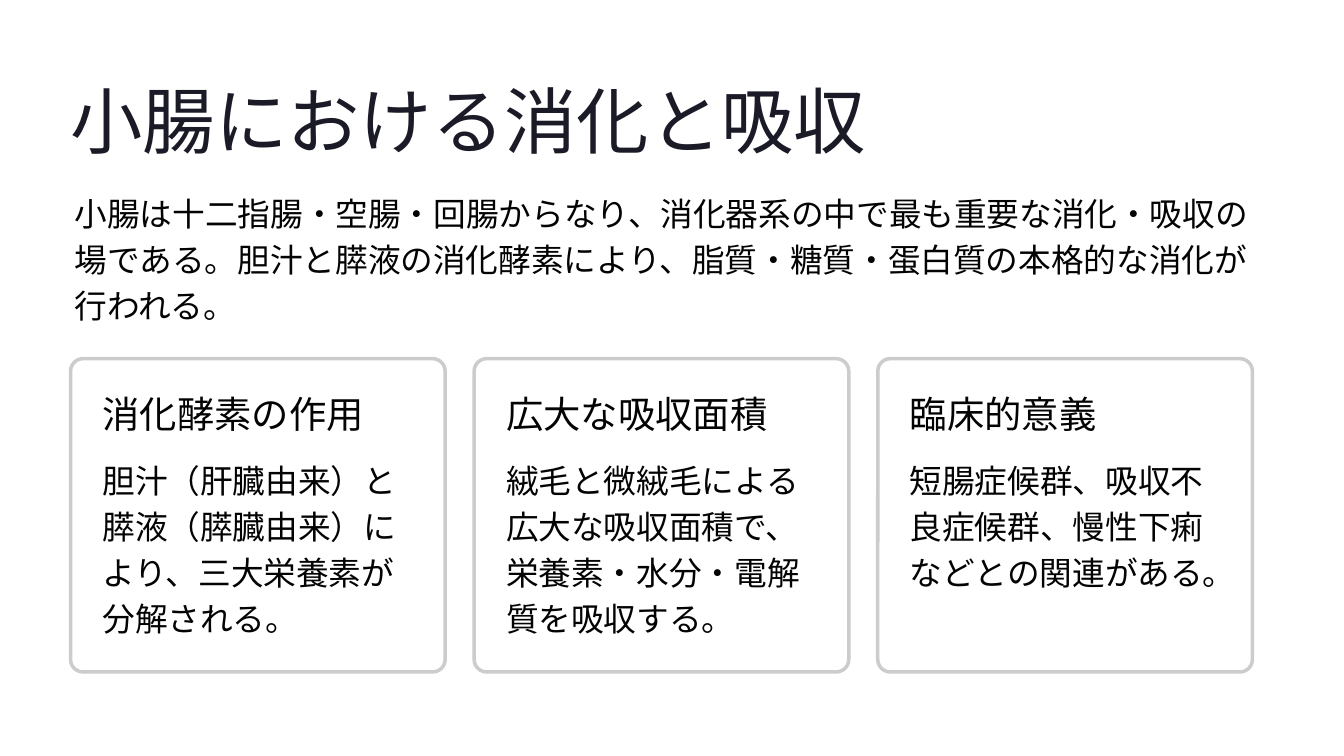
"""Builds a slide on digestion and absorption in the small intestine."""
from dataclasses import dataclass

from pptx import Presentation
from pptx.dml.color import RGBColor
from pptx.enum.lang import MSO_LANGUAGE_ID as Lang
from pptx.enum.shapes import MSO_SHAPE as Shape
from pptx.enum.text import MSO_ANCHOR as Anchor, MSO_AUTO_SIZE as AutoSize, PP_ALIGN as Align
from pptx.oxml.ns import qn
from pptx.util import Inches, Pt
from lxml.etree import SubElement


@dataclass(frozen=True)
class Theme:
    white: str = "FFFFFF"
    title_ink: str = "1B1B27"
    ink: str = "030303"
    border: str = "CCCCCC"
    head_font: str = "Inter"
    body_font: str = "Cabin"
    title_size: float = 62
    head_size: float = 32
    body_size: float = 28
    title_leading: float = 77.5
    head_leading: float = 38.5
    body_leading: float = 39.5
    border_width: float = 3


THEME = Theme()
TITLE = "小腸における消化と吸収"
INTRO = ("小腸は十二指腸・空腸・回腸からなり、消化器系の中で最も重要な消化・吸収の場である。"
         "胆汁と膵液の消化酵素により、脂質・糖質・蛋白質の本格的な消化が行われる。")
CARDS = [
    ("消化酵素の作用", "胆汁（肝臓由来）と膵液（膵臓由来）により、三大栄養素が分解される。", 4),
    ("広大な吸収面積", "絨毛と微絨毛による広大な吸収面積で、栄養素・水分・電解質を吸収する。", 4),
    ("臨床的意義", "短腸症候群、吸収不良症候群、慢性下痢などとの関連がある。", 3),
]
MARGIN, CONTENT_WIDTH = 0.84, 14.07
CARD_TOP, CARD_WIDTH, CARD_HEIGHT = 4.27, 4.46, 3.73
CARD_PITCH = (CONTENT_WIDTH - CARD_WIDTH) / (len(CARDS) - 1)
CARD_PAD, BODY_OFFSET, HEAD_HEIGHT, LINE_HEIGHT = 0.38, 1.13, 0.54, 0.55
CARD_TEXT_WIDTH = 3.69


def write(frame, text, *, font, size, color, leading, wrap=True):
    """Puts one formatted paragraph into a text frame."""
    frame.margin_left = frame.margin_right = frame.margin_top = frame.margin_bottom = 0
    frame.auto_size = AutoSize.NONE
    frame.word_wrap = wrap
    frame.vertical_anchor = Anchor.TOP
    paragraph = frame.paragraphs[0]
    paragraph.alignment = Align.LEFT
    paragraph.line_spacing = Pt(leading)
    paragraph.space_before = paragraph.space_after = Pt(0)
    run = paragraph.add_run()
    run.text = text
    run.font.name = font
    run.font.size = Pt(size)
    run.font.color.rgb = RGBColor.from_string(color)
    run.font.language_id = Lang.JAPANESE
    SubElement(run.font._element, qn("a:ea"), typeface=font)
    return paragraph


class SlideBuilder:
    """Holds the theme and the current slide."""

    def __init__(self, slide, theme):
        self.slide = slide
        self.theme = theme
        self.head_style = dict(font=theme.head_font, size=theme.head_size,
                               color=theme.ink, leading=theme.head_leading, wrap=False)
        self.body_style = dict(font=theme.body_font, size=theme.body_size,
                               color=theme.ink, leading=theme.body_leading)

    def place(self, placeholder, left, top, width, height):
        """Moves a placeholder."""
        placeholder.left, placeholder.top = Inches(left), Inches(top)
        placeholder.width, placeholder.height = Inches(width), Inches(height)

    def title(self, text, *box):
        """Fills the title placeholder."""
        heading = self.slide.shapes.title
        self.place(heading, *box)
        write(heading.text_frame, text, font=self.theme.head_font,
              size=self.theme.title_size, color=self.theme.title_ink,
              leading=self.theme.title_leading, wrap=False)

    def intro(self, text, *box):
        """Fills the body placeholder with unbulleted text."""
        body = self.slide.placeholders[1]
        self.place(body, *box)
        paragraph = write(body.text_frame, text, **self.body_style)
        properties = paragraph._p.get_or_add_pPr()
        properties.set("marL", "0")
        properties.set("indent", "0")
        SubElement(properties, qn("a:buNone"))

    def text(self, text, left, top, width, height, **style):
        """Adds a text box."""
        box = self.slide.shapes.add_textbox(Inches(left), Inches(top),
                                            Inches(width), Inches(height))
        write(box.text_frame, text, **style)

    def panel(self, left, top, width, height):
        """Adds a rounded, bordered panel."""
        panel = self.slide.shapes.add_shape(Shape.ROUNDED_RECTANGLE, Inches(left), Inches(top),
                                            Inches(width), Inches(height))
        panel.adjustments[0] = 0.04
        panel.shadow.inherit = False
        panel.fill.solid()
        panel.fill.fore_color.rgb = RGBColor.from_string(self.theme.white)
        tint = panel._element.spPr.find(qn("a:solidFill")).find(qn("a:srgbClr"))
        SubElement(tint, qn("a:alpha"), val="95000")
        panel.line.color.rgb = RGBColor.from_string(self.theme.border)
        panel.line.width = Pt(self.theme.border_width)

    def card(self, left, heading, detail, lines):
        """Adds a panel with its heading and detail."""
        self.panel(left, CARD_TOP, CARD_WIDTH, CARD_HEIGHT)
        text_left = left + CARD_PAD
        self.text(heading, text_left, CARD_TOP + CARD_PAD, CARD_TEXT_WIDTH, HEAD_HEIGHT,
                  **self.head_style)
        self.text(detail, text_left, CARD_TOP + BODY_OFFSET, CARD_TEXT_WIDTH,
                  lines * LINE_HEIGHT, **self.body_style)


def main():
    """Builds and saves the presentation."""
    deck = Presentation()
    deck.slide_width, deck.slide_height = Inches(16), Inches(9)
    slide = deck.slides.add_slide(deck.slide_layouts[1])
    slide.background.fill.solid()
    slide.background.fill.fore_color.rgb = RGBColor.from_string(THEME.white)
    builder = SlideBuilder(slide, THEME)
    builder.title(TITLE, MARGIN, 0.86, 9.48, 1.08)
    builder.intro(INTRO, 0.89, 2.22, CONTENT_WIDTH, 1.1)
    for index, (heading, detail, lines) in enumerate(CARDS):
        builder.card(MARGIN + index * CARD_PITCH, heading, detail, lines)
    deck.save("out.pptx")


if __name__ == "__main__":
    main()
